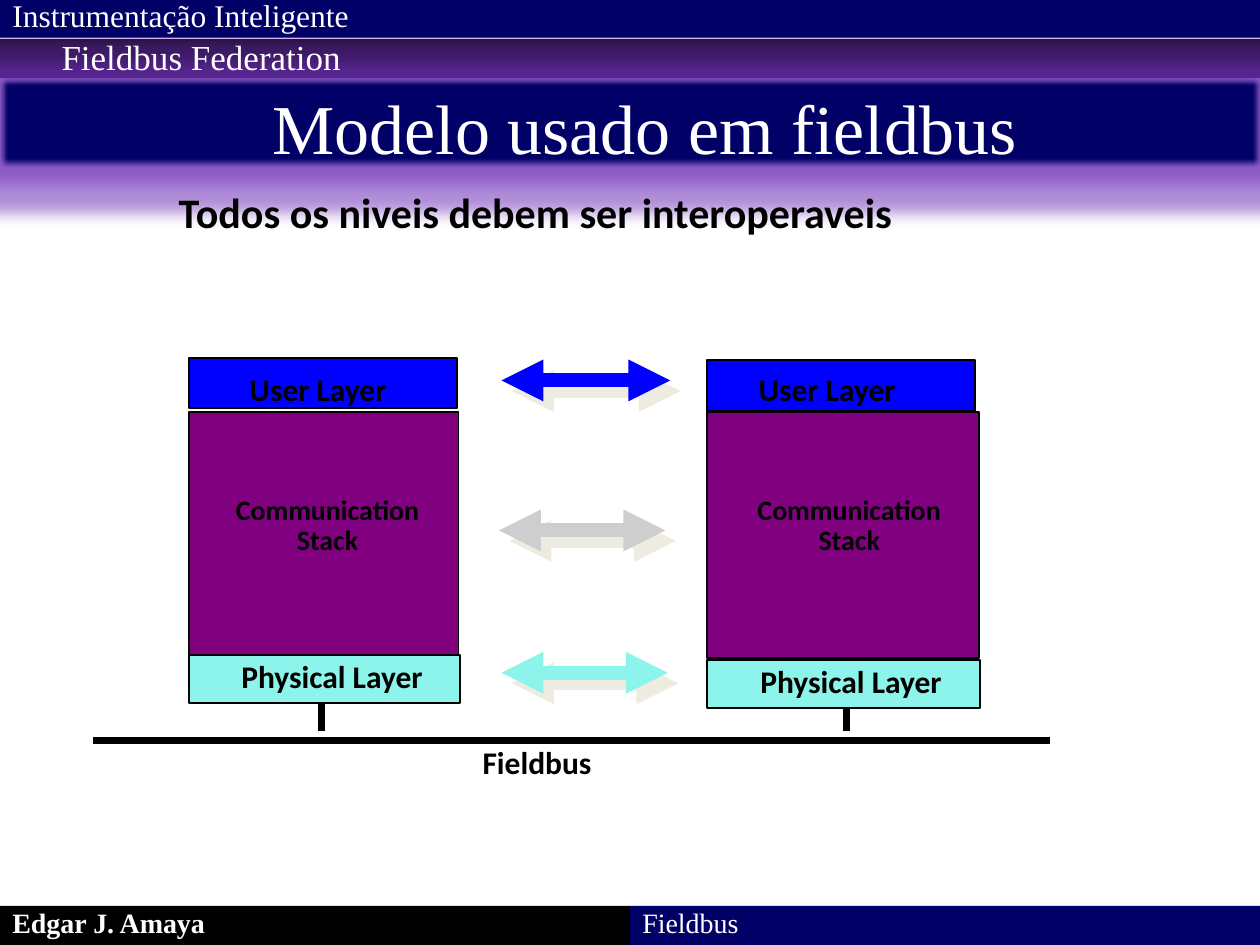
from lxml.etree import SubElement
from pptx import Presentation
from pptx.dml.color import RGBColor
from pptx.enum.shapes import MSO_CONNECTOR, MSO_SHAPE
from pptx.enum.text import MSO_ANCHOR, PP_ALIGN
from pptx.oxml.ns import qn
from pptx.util import Inches, Pt

SERIF, SANS = "Times New Roman", "Calibri"
BLACK, WHITE, NAVY = "000000", "FFFFFF", "000066"
BLUE, PURPLE, AQUA, GREY = "0000FF", "800080", "8CF4EA", "CECECE"
SHADOW, GLOW = "EEECE1", "7030B8"

# left, top, width, height, fill
BANDS = [(0, 0.31, 10, 0.31, BLACK), (0, 0.62, 10, 0.7, NAVY), (0, 0, 10, 0.3, NAVY)]
FOOTERS = [(0, BLACK, "Edgar J. Amaya", True), (5, NAVY, "Fieldbus", False)]
HEADINGS = [
    ("Instrumentação Inteligente", (0, -0.08, 6.33, 0.4), 18, PP_ALIGN.LEFT),
    ("Fieldbus Federation", (0.39, 0.23, 5, 0.44), 20, PP_ALIGN.LEFT),
    ("Modelo usado em fieldbus", (0.23, 0.62, 9.77, 0.77), 40, PP_ALIGN.CENTER),
]
# each device: the three layer boxes, the places of two labels, the drop line
DEVICES = [
    {"user": (1.5, 2.84, 2.13, 0.4), "stack": (1.5, 3.27, 2.14, 1.93),
     "physical": (1.5, 5.2, 2.15, 0.38), "user_label": 1.93, "stack_label": 1.66,
     "drop": 2.55},
    {"user": (5.61, 2.86, 2.13, 0.4), "stack": (5.61, 3.27, 2.16, 1.95),
     "physical": (5.61, 5.24, 2.17, 0.38), "user_label": 5.97, "stack_label": 5.8,
     "drop": 6.72},
]
# left, right, height on the page, colour
ARROWS = [(3.98, 5.32, 3.02, BLUE), (3.98, 5.3, 5.34, AQUA), (3.96, 5.28, 4.21, GREY)]

deck = Presentation()
deck.slide_width, deck.slide_height = Inches(10), Inches(7.5)
page = deck.slides.add_slide(deck.slide_layouts[6])


def rgb(colour):
    return RGBColor.from_string(colour)


def effect(parent, kind, colour, alpha=100, **attributes):
    node = SubElement(parent, qn(f"a:{kind}"), attributes)
    tint = SubElement(node, qn("a:srgbClr"), val=colour)
    SubElement(tint, qn("a:alpha"), val=str(alpha * 1000))


def write(box, text, size=18, font=SANS, colour=BLACK, bold=True, align=PP_ALIGN.LEFT,
          anchor=MSO_ANCHOR.TOP, margins=(0.1, 0.05), wrap=True, spacing=1.0, before=0,
          indent=None):
    frame = box.text_frame
    frame.word_wrap, frame.vertical_anchor = wrap, anchor
    frame.margin_left = frame.margin_right = Inches(margins[0])
    frame.margin_top = frame.margin_bottom = Inches(margins[1])
    for number, line in enumerate(text.split("\n")):
        para = frame.add_paragraph() if number else frame.paragraphs[0]
        para.alignment, para.line_spacing = align, spacing
        para.space_before = Pt(before)
        if indent:
            properties = para._p.get_or_add_pPr()
            properties.set("marL", str(Inches(indent[0])))
            properties.set("indent", str(Inches(indent[1])))
        span = para.add_run()
        span.text = line
        span.font.name, span.font.size, span.font.bold = font, Pt(size), bold
        span.font.color.rgb = rgb(colour)


def add_text(text, place, **style):
    write(page.shapes.add_textbox(*map(Inches, place)), text, **style)


def add_box(place, fill, line=None):
    box = page.shapes.add_shape(MSO_SHAPE.RECTANGLE, *map(Inches, place))
    box.shadow.inherit = False
    box.fill.solid()
    box.fill.fore_color.rgb = rgb(fill)
    if line:
        box.line.color.rgb = rgb(line)
        box.line.width = Pt(1)
    else:
        box.line.fill.background()
    return box


def add_line(x1, y1, x2, y2, colour=BLACK, width=4, arrow=False):
    line = page.shapes.add_connector(
        MSO_CONNECTOR.STRAIGHT, *map(Inches, (x1, y1, x2, y2)))
    line.line.color.rgb = rgb(colour)
    line.line.width = Pt(width)
    if arrow:
        for end in ("headEnd", "tailEnd"):
            SubElement(line.line._get_or_add_ln(), qn(f"a:{end}"), type="triangle")
    effects = SubElement(line._element.spPr, qn("a:effectLst"))
    if arrow:
        effect(effects, "outerShdw", SHADOW, dist=str(Pt(8.5)), dir="2700000",
               algn="ctr", rotWithShape="0")


for *place, fill in BANDS:
    band = add_box(place, fill)
    if place[1] == 0.62:
        effects = band._element.spPr.find(qn("a:effectLst"))
        effect(effects, "glow", GLOW, alpha=55, rad=str(Pt(18)))
        SubElement(effects, qn("a:softEdge"), rad=str(Pt(2.5)))

for left, fill, text, bold in FOOTERS:
    write(add_box((left, 7.19, 5, 0.31), fill), text, size=16, font=SERIF, colour=WHITE,
          bold=bold, anchor=MSO_ANCHOR.BOTTOM, before=3)

add_line(0.74, 5.88, 8.33, 5.88)
add_text("Fieldbus", (3.74, 5.88, 1.2, 0.36), margins=(0.09, 0.05), wrap=False, spacing=0.9)

for device in DEVICES:
    add_box(device["user"], BLUE, BLACK)
    add_text("User Layer", (device["user_label"], 2.92, 1.45, 0.34),
             margins=(0.05, 0.02), wrap=False)
    add_box(device["stack"], PURPLE, BLACK)
    add_text("Communication\nStack", (device["stack_label"], 3.89, 1.88, 0.58), size=16,
             align=PP_ALIGN.CENTER, wrap=False, spacing=0.9)
    add_line(device["drop"], 5.53, device["drop"], 5.8)
    write(add_box(device["physical"], AQUA, BLACK), "Physical Layer",
          align=PP_ALIGN.CENTER, spacing=0.9, before=5.4, indent=(0.31, -0.19))

for left, right, level, colour in ARROWS:
    add_line(left, level, right, level, colour, width=8, arrow=True)

add_text("Todos os niveis debem ser interoperaveis", (1.32, 1.43, 6.85, 0.5), size=24,
         wrap=False)
for text, place, size, align in HEADINGS:
    add_text(text, place, size=size, font=SERIF, colour=WHITE, bold=False, align=align)

deck.save("out.pptx")
